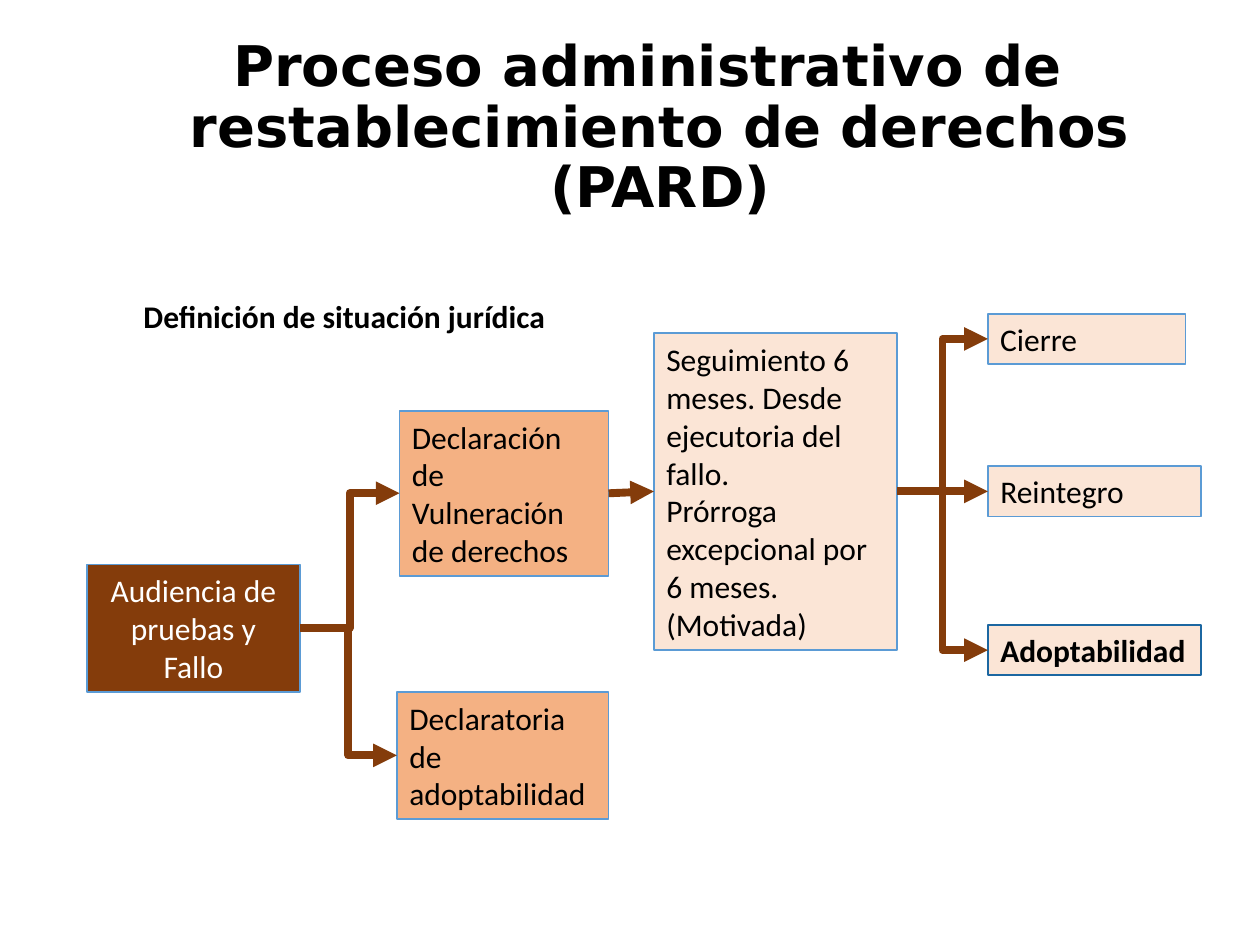
from dataclasses import dataclass

from lxml import etree
from pptx import Presentation
from pptx.dml.color import RGBColor
from pptx.enum.shapes import MSO_CONNECTOR, MSO_SHAPE
from pptx.enum.text import MSO_ANCHOR, MSO_AUTO_SIZE, PP_ALIGN
from pptx.oxml.ns import qn
from pptx.util import Inches, Pt

RECT = MSO_SHAPE.RECTANGLE
ELBOW, STRAIGHT = MSO_CONNECTOR.ELBOW, MSO_CONNECTOR.STRAIGHT
LEFT, CENTER, JUSTIFY = PP_ALIGN.LEFT, PP_ALIGN.CENTER, PP_ALIGN.JUSTIFY
MIDDLE = MSO_ANCHOR.MIDDLE
GROW, FIXED = MSO_AUTO_SIZE.SHAPE_TO_FIT_TEXT, MSO_AUTO_SIZE.NONE
LEFT_SIDE, RIGHT_SIDE = 1, 3


@dataclass(frozen=True)
class Theme:
    title_font: str = "DejaVu Sans"
    body_font: str = "Calibri"
    title_size: int = 32
    body_size: int = 18
    border_width: float = 1
    arrow_width: float = 4.5
    black: str = "000000"
    white: str = "FFFFFF"
    brown: str = "843C0B"
    orange: str = "F4B183"
    peach: str = "FBE5D6"
    blue: str = "5B9BD5"
    dark_blue: str = "1C67A1"


def rgb(value):
    return RGBColor.from_string(value)


def write(tf, text, *, font, size, color, bold=False, align=LEFT, autofit=GROW):
    tf.word_wrap = True
    tf.auto_size = autofit
    for i, line in enumerate(text.split("\n")):
        p = tf.paragraphs[0] if i == 0 else tf.add_paragraph()
        p.alignment = align
        r = p.add_run()
        r.text = line
        r.font.name = font
        r.font.size = Pt(size)
        r.font.bold = bold
        r.font.color.rgb = rgb(color)


class Deck:
    """Draws styled elements on the current slide."""

    def __init__(self, prs, theme):
        self.theme = theme
        self.s = prs.slides.add_slide(prs.slide_layouts[5])

    def body(self, tf, text, color, **fmt):
        write(tf, text, font=self.theme.body_font, size=self.theme.body_size,
              color=color, **fmt)

    def title(self, text, x, y, w, h):
        sp = self.s.shapes.title
        sp.left, sp.top, sp.width, sp.height = map(Inches, (x, y, w, h))
        tf = sp.text_frame
        tf.vertical_anchor = MIDDLE
        write(tf, text, font=self.theme.title_font, size=self.theme.title_size,
              color=self.theme.black, bold=True, align=CENTER, autofit=FIXED)
        p = tf.paragraphs[0]
        p.line_spacing = 0.9
        pPr = p._p.get_or_add_pPr()
        pPr.set("marL", str(Inches(0.2)))
        pPr.set("indent", str(Inches(-0.2)))

    def label(self, text, x, y, w, h):
        sp = self.s.shapes.add_textbox(*map(Inches, (x, y, w, h)))
        self.body(sp.text_frame, text, self.theme.black, bold=True)

    def box(self, text, x, y, w, h, fill, color=None, border=None, **fmt):
        sp = self.s.shapes.add_shape(RECT, *map(Inches, (x, y, w, h)))
        sp.shadow.inherit = False
        sp.fill.solid()
        sp.fill.fore_color.rgb = rgb(fill)
        sp.line.color.rgb = rgb(border or self.theme.blue)
        sp.line.width = Pt(self.theme.border_width)
        self.body(sp.text_frame, text, color or self.theme.black, **fmt)
        return sp

    def arrow(self, start, end, kind=ELBOW):
        cxn = self.s.shapes.add_connector(kind, 0, 0, 0, 0)
        cxn.begin_connect(start, RIGHT_SIDE)
        cxn.end_connect(end, LEFT_SIDE)
        cxn.line.color.rgb = rgb(self.theme.brown)
        cxn.line.width = Pt(self.theme.arrow_width)
        etree.SubElement(cxn.line._get_or_add_ln(), qn("a:tailEnd"), type="triangle")
        etree.SubElement(cxn._element.spPr, qn("a:effectLst"))


def main():
    prs = Presentation()
    prs.slide_width, prs.slide_height = Inches(10), Inches(7.5)
    theme = Theme()
    deck = Deck(prs, theme)

    deck.title("Proceso administrativo de restablecimiento de derechos (PARD)",
               0.69, 0.3, 8.9, 1.45)
    deck.label("Definición de situación jurídica", 1.04, 2.31, 6.39, 0.4)

    hearing = deck.box("Audiencia de pruebas y Fallo", 0.69, 4.48, 1.69, 1.01,
                       theme.brown, theme.white, align=CENTER)
    violation = deck.box("Declaración de Vulneración de derechos",
                         3.17, 3.26, 1.66, 1.31, theme.orange, align=JUSTIFY)
    adoptability = deck.box("Declaratoria de adoptabilidad",
                            3.15, 5.49, 1.68, 1.01, theme.orange, align=JUSTIFY)
    follow_up = deck.box("Seguimiento 6 meses. Desde ejecutoria del fallo.\n"
                         "Prórroga excepcional por 6 meses. (Motivada)",
                         5.19, 2.64, 1.93, 2.52, theme.peach)
    outcomes = [
        deck.box(text, 7.84, y, w, 0.4, theme.peach, border=border, bold=bold)
        for text, y, w, border, bold in (
            ("Cierre", 2.49, 1.57, theme.blue, False),
            ("Reintegro", 3.7, 1.69, theme.blue, False),
            ("Adoptabilidad", 4.96, 1.69, theme.dark_blue, True),
        )
    ]

    for ruling in (violation, adoptability):
        deck.arrow(hearing, ruling)
    deck.arrow(violation, follow_up, STRAIGHT)
    for outcome in outcomes:
        deck.arrow(follow_up, outcome)

    prs.save("out.pptx")


if __name__ == "__main__":
    main()
